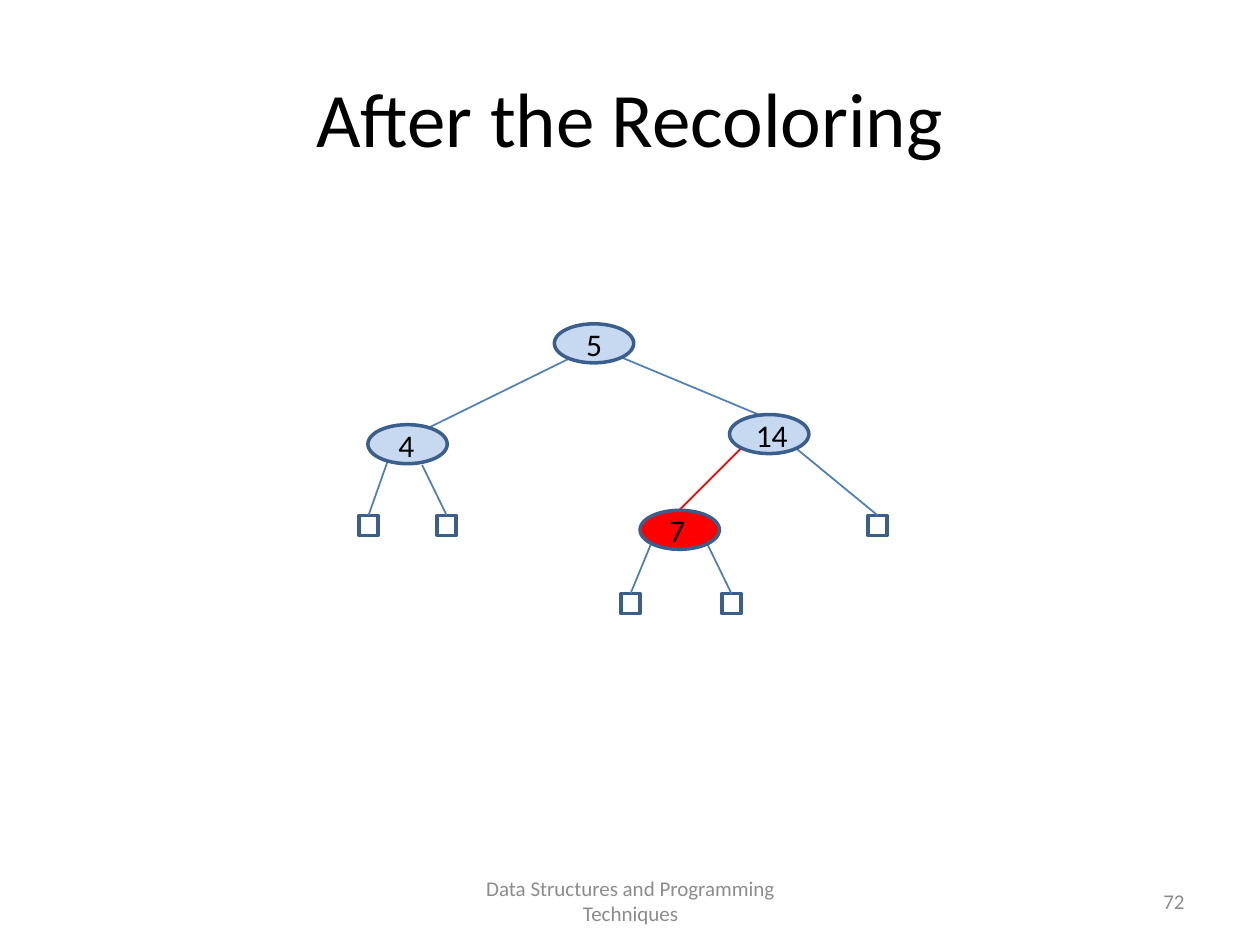
from lxml.etree import SubElement
from pptx import Presentation
from pptx.dml.color import RGBColor
from pptx.enum.shapes import MSO_CONNECTOR, MSO_SHAPE
from pptx.enum.text import MSO_ANCHOR as ANCHOR, MSO_AUTO_SIZE as FIT, PP_ALIGN as ALIGN
from pptx.oxml.ns import qn
from pptx.util import Inches, Pt

# Content: text, box, size, colour, alignment
FRAME_TEXTS = [
    ("After the Recoloring", (0.5, 0.3, 9, 1.25), 44, "000000", ALIGN.CENTER),
    ("Data Structures and Programming Techniques", (3.42, 6.95, 3.17, 0.4), 12, "8C8C8C", ALIGN.CENTER),
    ("72", (7.17, 6.95, 2.33, 0.4), 12, "8C8C8C", ALIGN.RIGHT),
]
BLACK_NODE, RED_NODE, OUTLINE = "C6D9F1", "FF0000", "3A5F8C"
INNER_EDGE, LEAF_EDGE, RED_EDGE = "4F81BD", "4B7EBC", "FF0000"

# Key, left, top, fill, label left
NODES = [
    ("5", 4.4, 2.57, BLACK_NODE, 4.47),
    ("4", 2.92, 3.37, BLACK_NODE, 2.98),
    ("14", 5.79, 3.29, BLACK_NODE, 5.88),
    ("7", 5.08, 4.05, RED_NODE, 5.13),
]
# Start, end, colour
INNER_EDGES = [
    ((4.94, 2.84), (6.02, 3.29), INNER_EDGE),
    ((4.53, 2.84), (3.31, 3.44), INNER_EDGE),
    ((5.88, 3.56), (5.39, 4.05), RED_EDGE),
]
# Leaf left and top, start of the edge that leads to it
LEAVES = [
    ((2.85, 4.09), (3.08, 3.65)),
    ((3.47, 4.09), (3.35, 3.69)),
    ((6.89, 4.09), (6.32, 3.56)),
    ((4.93, 4.71), (5.17, 4.31)),
    ((5.73, 4.71), (5.61, 4.31)),
]
NODE_SIZE = (0.63, 0.31)
LEAF_SIZE = (0.15, 0.16)
LABEL_SIZE = (0.49, 0.4)
LABEL_RISE = 0.04


def color(value):
    return RGBColor.from_string(value)


def add_text(slide, text, box, size, ink, align, **frame_format):
    frame = slide.shapes.add_textbox(*map(Inches, box)).text_frame
    for name, value in {"word_wrap": True, **frame_format}.items():
        setattr(frame, name, value)
    line = frame.paragraphs[0]
    line.alignment = align
    run = line.add_run()
    run.text = text
    for name, value in {"name": "Calibri", "size": Pt(size)}.items():
        setattr(run.font, name, value)
    run.font.color.rgb = color(ink)


def add_outlined(slide, kind, corner, size, fill=None):
    shape = slide.shapes.add_shape(kind, *map(Inches, corner + size))
    shape.shadow.inherit = False
    if fill:
        shape.fill.solid()
        shape.fill.fore_color.rgb = color(fill)
    else:
        shape.fill.background()
    shape.line.color.rgb = color(OUTLINE)
    shape.line.width = Pt(2)
    return shape


def add_edge(slide, start, end, ink):
    edge = slide.shapes.add_connector(MSO_CONNECTOR.STRAIGHT, *map(Inches, start + end))
    edge.line.color.rgb = color(ink)
    edge.line.width = Pt(1)
    SubElement(edge._element.spPr, qn("a:effectLst"))
    return edge


def main():
    deck = Presentation()
    deck.slide_width, deck.slide_height = Inches(10), Inches(7.5)
    slide = deck.slides.add_slide(deck.slide_layouts[6])

    # Title and footer
    for entry in FRAME_TEXTS:
        add_text(slide, *entry, vertical_anchor=ANCHOR.MIDDLE)

    # Edges go below the nodes
    for edge in INNER_EDGES:
        add_edge(slide, *edge)
    for corner, start in LEAVES:
        leaf = add_outlined(slide, MSO_SHAPE.RECTANGLE, corner, LEAF_SIZE)
        add_edge(slide, start, corner, LEAF_EDGE).end_connect(leaf, 0)

    # Nodes with their keys
    for key, left, top, fill, label_left in NODES:
        add_outlined(slide, MSO_SHAPE.OVAL, (left, top), NODE_SIZE, fill)
        label_box = (label_left, top - LABEL_RISE) + LABEL_SIZE
        add_text(slide, key, label_box, 18, "000000", ALIGN.CENTER,
                 auto_size=FIT.SHAPE_TO_FIT_TEXT)

    deck.save("out.pptx")


if __name__ == "__main__":
    main()
